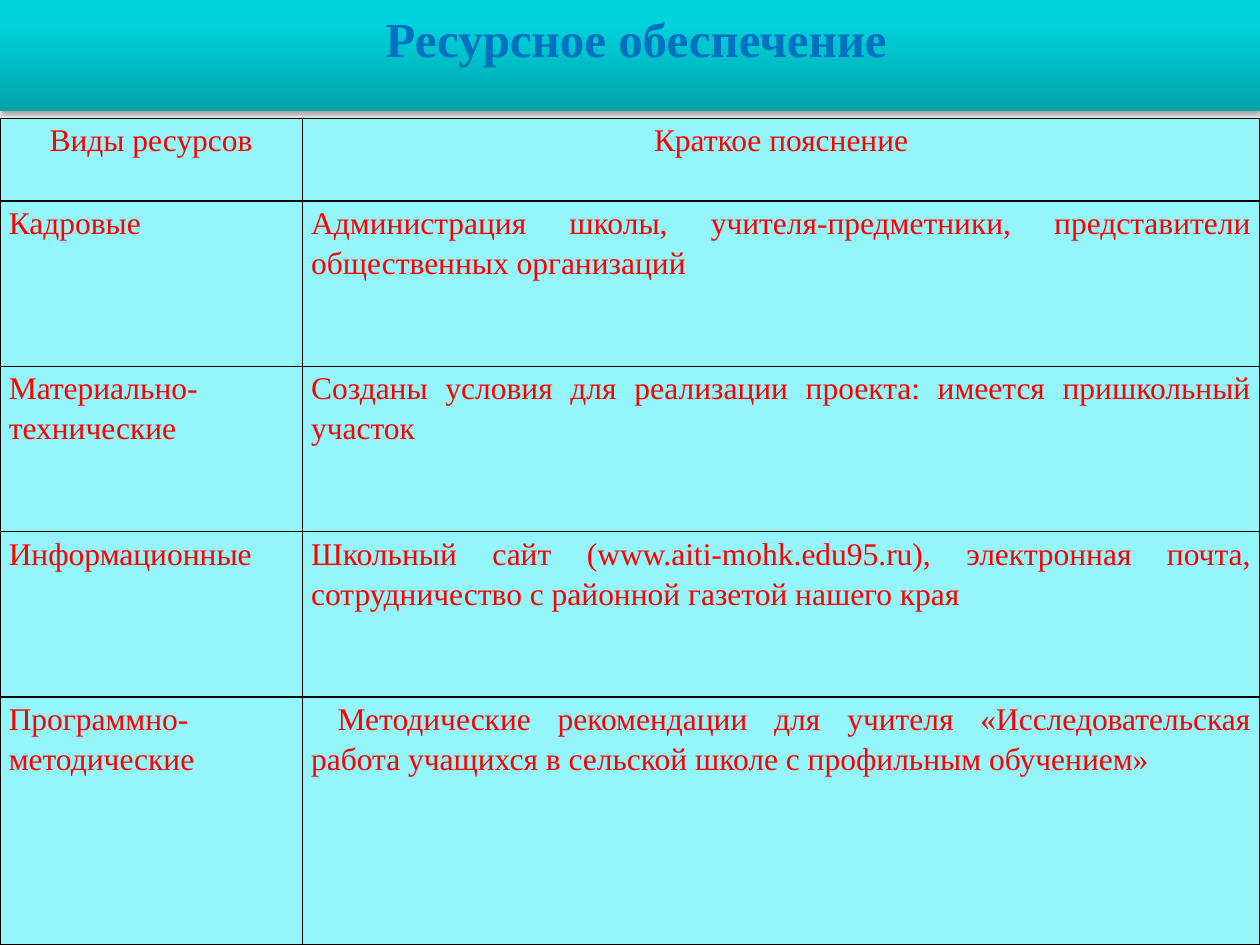
from dataclasses import dataclass

from pptx import Presentation
from pptx.dml.color import RGBColor
from pptx.enum.text import MSO_ANCHOR, MSO_AUTO_SIZE, PP_ALIGN
from pptx.oxml import parse_xml
from pptx.oxml.ns import nsdecls
from pptx.util import Inches, Pt

TITLE = "Ресурсное обеспечение"
ROWS = [
    ("Виды ресурсов", "Краткое пояснение"),
    ("Кадровые", "Администрация школы, учителя-предметники, "
                 "представители общественных организаций"),
    ("Материально-технические", "Созданы условия для реализации проекта: "
                                "имеется пришкольный участок"),
    ("Информационные", "Школьный сайт (www.aiti-mohk.edu95.ru), электронная почта, "
                       "сотрудничество с районной газетой нашего края"),
    ("Программно-методические", "Методические рекомендации для учителя «Исследовательская "
                                "работа учащихся в сельской школе с профильным обучением»"),
]
COL_SHARES = (0.24, 0.76)
ROW_UNITS = (1, 2, 2, 2, 3)
LAST_INDENT = Inches(0.21)


@dataclass(frozen=True)
class Theme:
    font: str = "Times New Roman"
    title_size: int = 28
    body_size: int = 18
    title: str = "0070C0"
    body: str = "FF0000"
    cell: str = "94F5FA"
    border: str = "000000"
    banner: tuple = ((0, "00A3AA"), (80, "00D3DD"), (100, "00D4DE"))


T = Theme()


def style(p, size, color, align, bold=False):
    p.alignment = align
    f = p.font
    f.name, f.size, f.bold = T.font, Pt(size), bold
    f.color.rgb = RGBColor.from_string(color)


def add_banner_look(shape):
    """Give the shape the vertical gradient and the soft shadow below it."""
    stops = "".join(f'<a:gs pos="{pos * 1000}"><a:srgbClr val="{color}"/></a:gs>'
                    for pos, color in T.banner)
    sp_pr = shape._element.spPr
    sp_pr.append(parse_xml(
        f'<a:gradFill {nsdecls("a")} rotWithShape="1"><a:gsLst>{stops}</a:gsLst>'
        '<a:lin ang="16200000" scaled="0"/></a:gradFill>'))
    sp_pr.append(parse_xml(
        f'<a:effectLst {nsdecls("a")}><a:outerShdw blurRad="{Pt(3.1)}" dist="{Pt(1.8)}" '
        'dir="5400000" rotWithShape="0"><a:srgbClr val="000000"><a:alpha val="35000"/>'
        '</a:srgbClr></a:outerShdw></a:effectLst>'))


def add_borders(cell):
    tc_pr = cell._tc.get_or_add_tcPr()
    for i, side in enumerate(("lnL", "lnR", "lnT", "lnB")):
        tc_pr.insert(i, parse_xml(
            f'<a:{side} {nsdecls("a")} w="{Pt(1)}"><a:solidFill>'
            f'<a:srgbClr val="{T.border}"/></a:solidFill></a:{side}>'))


def add_title(s, width, height):
    sp = s.shapes.title
    sp.left, sp.top, sp.width, sp.height = 0, 0, width, height
    add_banner_look(sp)
    tf = sp.text_frame
    tf.text = TITLE
    tf.auto_size = MSO_AUTO_SIZE.NONE
    tf.vertical_anchor = MSO_ANCHOR.TOP
    tf.margin_top, tf.margin_left = Inches(0.07), Inches(0.2)
    style(tf.paragraphs[0], T.title_size, T.title, PP_ALIGN.CENTER, bold=True)


def add_resources(s, top, width, height):
    table = s.shapes.add_table(len(ROWS), len(COL_SHARES), 0, top, width, height).table
    for col, share in zip(table.columns, COL_SHARES):
        col.width = int(width * share)
    for row, units in zip(table.rows, ROW_UNITS):
        row.height = int(height * units / sum(ROW_UNITS))
    for r, texts in enumerate(ROWS):
        for c, text in enumerate(texts):
            cell = table.cell(r, c)
            cell.text = text
            cell.margin_left = cell.margin_right = Inches(0.07)
            cell.margin_top = cell.margin_bottom = 0
            cell.fill.solid()
            cell.fill.fore_color.rgb = RGBColor.from_string(T.cell)
            add_borders(cell)
            p = cell.text_frame.paragraphs[0]
            p.line_spacing = 1.15
            style(p, T.body_size, T.body, PP_ALIGN.JUSTIFY if r else PP_ALIGN.CENTER)
    p._p.get_or_add_pPr().set("indent", str(LAST_INDENT))


def main():
    prs = Presentation()
    prs.slide_width, prs.slide_height = Inches(10), Inches(7.5)
    s = prs.slides.add_slide(prs.slide_layouts[5])
    table_top = Inches(0.94)
    add_resources(s, table_top, prs.slide_width, prs.slide_height - table_top)
    add_title(s, prs.slide_width, Inches(0.88))
    prs.save("out.pptx")


if __name__ == "__main__":
    main()
